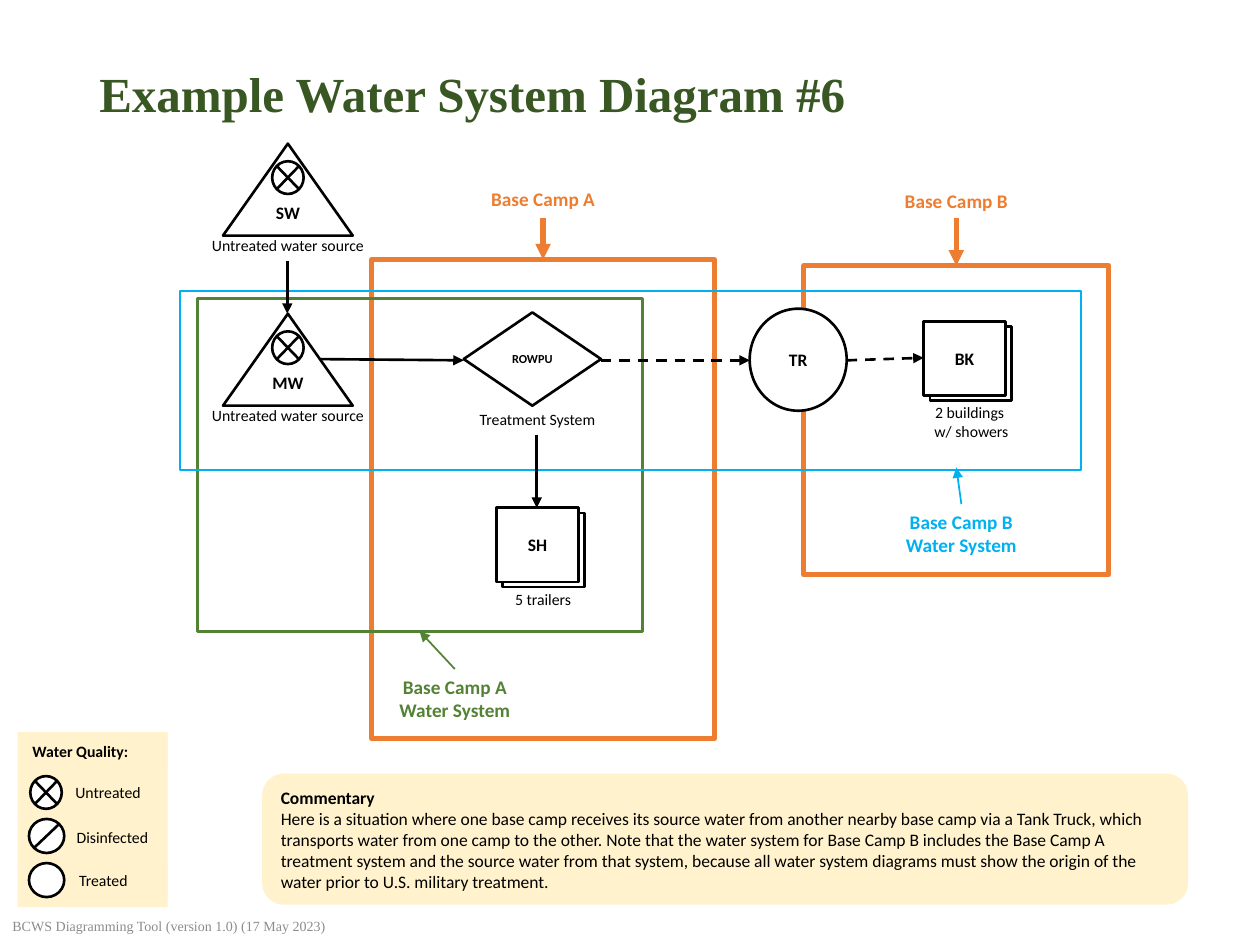
from lxml import etree
from pptx import Presentation
from pptx.dml.color import RGBColor
from pptx.enum.dml import MSO_LINE
from pptx.enum.shapes import MSO_CONNECTOR, MSO_SHAPE
from pptx.enum.text import MSO_ANCHOR, PP_ALIGN
from pptx.oxml.ns import qn
from pptx.util import Inches, Pt

RECT, ROUNDED = MSO_SHAPE.RECTANGLE, MSO_SHAPE.ROUNDED_RECTANGLE
TRIANGLE, DIAMOND = MSO_SHAPE.ISOSCELES_TRIANGLE, MSO_SHAPE.DIAMOND
CIRCLE = MSO_SHAPE.FLOWCHART_CONNECTOR
CROSSED_CIRCLE = MSO_SHAPE.FLOWCHART_SUMMING_JUNCTION
STRAIGHT, DASH = MSO_CONNECTOR.STRAIGHT, MSO_LINE.DASH
LEFT, CENTER = PP_ALIGN.LEFT, PP_ALIGN.CENTER
TOP, MIDDLE = MSO_ANCHOR.TOP, MSO_ANCHOR.MIDDLE

COLORS = {
    "black": "000000", "white": "FFFFFF", "gray": "8C8C8C", "title": "385723",
    "camp": "ED7D31", "system_a": "548235", "system_b": "00B0F0", "panel": "FFF2CC",
}
SERIF = "Times New Roman"


class Diagram:
    font = "Calibri"
    stroke = 1.5

    def __init__(self, slide):
        self.slide = slide

    def color(self, name):
        return RGBColor.from_string(COLORS[name])

    def fill_text(self, frame, lines, size, bold=False, color="black", align=CENTER,
                  anchor=MIDDLE, font=None, wrap=True):
        frame.word_wrap = wrap
        frame.vertical_anchor = anchor
        for index, line in enumerate(lines):
            paragraph = frame.add_paragraph() if index else frame.paragraphs[0]
            paragraph.alignment = align
            run = paragraph.add_run()
            run.text = line
            run.font.name = font or self.font
            run.font.size = Pt(size)
            run.font.bold = bold
            run.font.color.rgb = self.color(color)

    def text(self, box, *lines, **style):
        label = self.slide.shapes.add_textbox(*map(Inches, box))
        self.fill_text(label.text_frame, lines, **style)
        return label

    def shape(self, kind, box, fill="white", line="black", width=stroke):
        shape = self.slide.shapes.add_shape(kind, *map(Inches, box))
        shape.shadow.inherit = False
        if fill:
            shape.fill.solid()
            shape.fill.fore_color.rgb = self.color(fill)
        else:
            shape.fill.background()
        if line:
            shape.line.color.rgb = self.color(line)
            shape.line.width = Pt(width)
        else:
            shape.line.fill.background()
        return shape

    def symbol(self, kind, box, code, size=10):
        frame = self.shape(kind, box).text_frame
        frame.margin_left = frame.margin_right = 0
        frame.margin_top = frame.margin_bottom = 0
        self.fill_text(frame, [code], size, bold=True)

    def boundary(self, box, color, width=stroke):
        self.shape(RECT, box, None, color, width)

    def line(self, start, end, color="black", width=stroke, arrow=True, dashed=False):
        connector = self.slide.shapes.add_connector(
            STRAIGHT, *map(Inches, (*start, *end)))
        connector.line.color.rgb = self.color(color)
        connector.line.width = Pt(width)
        if dashed:
            connector.line.dash_style = DASH
        properties = connector._element.spPr
        if arrow:
            outline = properties.find(qn("a:ln"))
            etree.SubElement(outline, qn("a:tailEnd"), type="triangle")
        etree.SubElement(properties, qn("a:effectLst"))

    def source(self, code, top):
        self.symbol(TRIANGLE, (1.77, top, 1.03, 0.73), code)
        self.shape(CROSSED_CIRCLE, (2.16, top + 0.14, 0.25, 0.26))
        self.text((1.57, top + 0.68, 1.43, 0.25), "Untreated water source",
                  size=9, wrap=False)

    def facility(self, code, left, top):
        self.shape(RECT, (left + 0.05, top + 0.04, 0.65, 0.59))
        self.symbol(RECT, (left, top, 0.65, 0.59), code)

    def callout(self, box, words, color, start, end, width):
        self.text(box, words, size=11, bold=True, color=color, anchor=TOP)
        self.line(start, end, color, width)


def main():
    presentation = Presentation()
    presentation.slide_width, presentation.slide_height = Inches(10), Inches(7.5)
    slide = presentation.slides.add_slide(presentation.slide_layouts[6])
    diagram = Diagram(slide)

    title = diagram.text((0.69, 0.4, 8.62, 0.74), "Example Water System Diagram #6",
                         size=28, bold=True, color="title", align=LEFT, font=SERIF)
    title.text_frame.paragraphs[0].line_spacing = 0.9
    diagram.text((0, 7.2, 6, 0.29), "BCWS Diagramming Tool (version 1.0) (17 May 2023)",
                 size=8, color="gray", align=LEFT, font=SERIF)

    commentary = diagram.shape(ROUNDED, (2.08, 6.14, 7.35, 1.04), "panel", None)
    diagram.fill_text(commentary.text_frame, [
        "Commentary",
        "Here is a situation where one base camp receives its source water from another "
        "nearby base camp via a Tank Truck, which transports water from one camp to the "
        "other. Note that the water system for Base Camp B includes the Base Camp A "
        "treatment system and the source water from that system, because all water system "
        "diagrams must show the origin of the water prior to U.S. military treatment.",
    ], 10, align=LEFT)
    commentary.text_frame.paragraphs[0].runs[0].font.bold = True

    diagram.boundary((6.38, 2.11, 2.42, 2.45), "camp", 3)
    diagram.boundary((2.95, 2.06, 2.72, 3.8), "camp", 3)
    diagram.boundary((1.57, 2.37, 3.53, 2.64), "system_a")

    diagram.symbol(DIAMOND, (3.68, 2.48, 1.09, 0.74), "ROWPU", 7)
    diagram.text((3.69, 3.2, 1.15, 0.25), "Treatment System", size=9, wrap=False)
    diagram.symbol(CIRCLE, (5.95, 2.45, 0.77, 0.81), "TR")
    diagram.facility("BK", 7.33, 2.55)
    diagram.text((7.31, 3.15, 0.8, 0.4), "2 buildings ", "w/ showers", size=9, wrap=False)
    diagram.boundary((1.43, 2.31, 7.15, 1.42), "system_b")

    diagram.source("MW", 2.49)
    diagram.source("SW", 1.14)
    diagram.facility("SH", 3.94, 4.03)
    diagram.text((3.98, 4.63, 0.66, 0.25), "5 trailers", size=9, wrap=False)

    diagram.line((4.77, 2.86), (5.95, 2.86), dashed=True)
    diagram.line((6.72, 2.86), (7.33, 2.84), dashed=True)
    diagram.line((2.28, 2.07), (2.28, 2.49))
    diagram.line((2.54, 2.85), (3.68, 2.86))
    diagram.line((4.26, 3.45), (4.26, 4.03))

    for box, words, color, start, end, width in (
        ((7.03, 1.45, 1.12, 0.29), "Base Camp B", "camp", (7.59, 1.73), (7.59, 2.11), 3),
        ((3.75, 1.44, 1.12, 0.29), "Base Camp A", "camp", (4.31, 1.73), (4.31, 2.06), 3),
        ((7, 4, 1.26, 0.47), "Base Camp B Water System", "system_b",
         (7.63, 4), (7.59, 3.71), 1),
        ((3, 5.31, 1.22, 0.47), "Base Camp A Water System", "system_a",
         (3.61, 5.31), (3.33, 5.01), 1),
    ):
        diagram.callout(box, words, color, start, end, width)

    diagram.shape(RECT, (0.14, 5.81, 1.19, 1.39), "panel", None)
    for box, words, bold in (
        ((0.16, 5.84, 1.17, 0.25), "Water Quality:", True),
        ((0.5, 6.16, 0.79, 0.25), "Untreated", False),
        ((0.51, 6.52, 0.78, 0.25), "Disinfected", False),
        ((0.53, 6.86, 0.8, 0.25), "Treated", False),
    ):
        entry = diagram.shape(RECT, box, "panel", None)
        diagram.fill_text(entry.text_frame, [words], 9, bold=bold, align=LEFT)
    diagram.shape(CROSSED_CIRCLE, (0.24, 6.16, 0.25, 0.26))
    for top in (6.5, 6.85):
        diagram.shape(CIRCLE, (0.23, top, 0.28, 0.27))
    diagram.line((0.27, 6.73), (0.47, 6.54), arrow=False)

    presentation.save("out.pptx")


if __name__ == "__main__":
    main()
